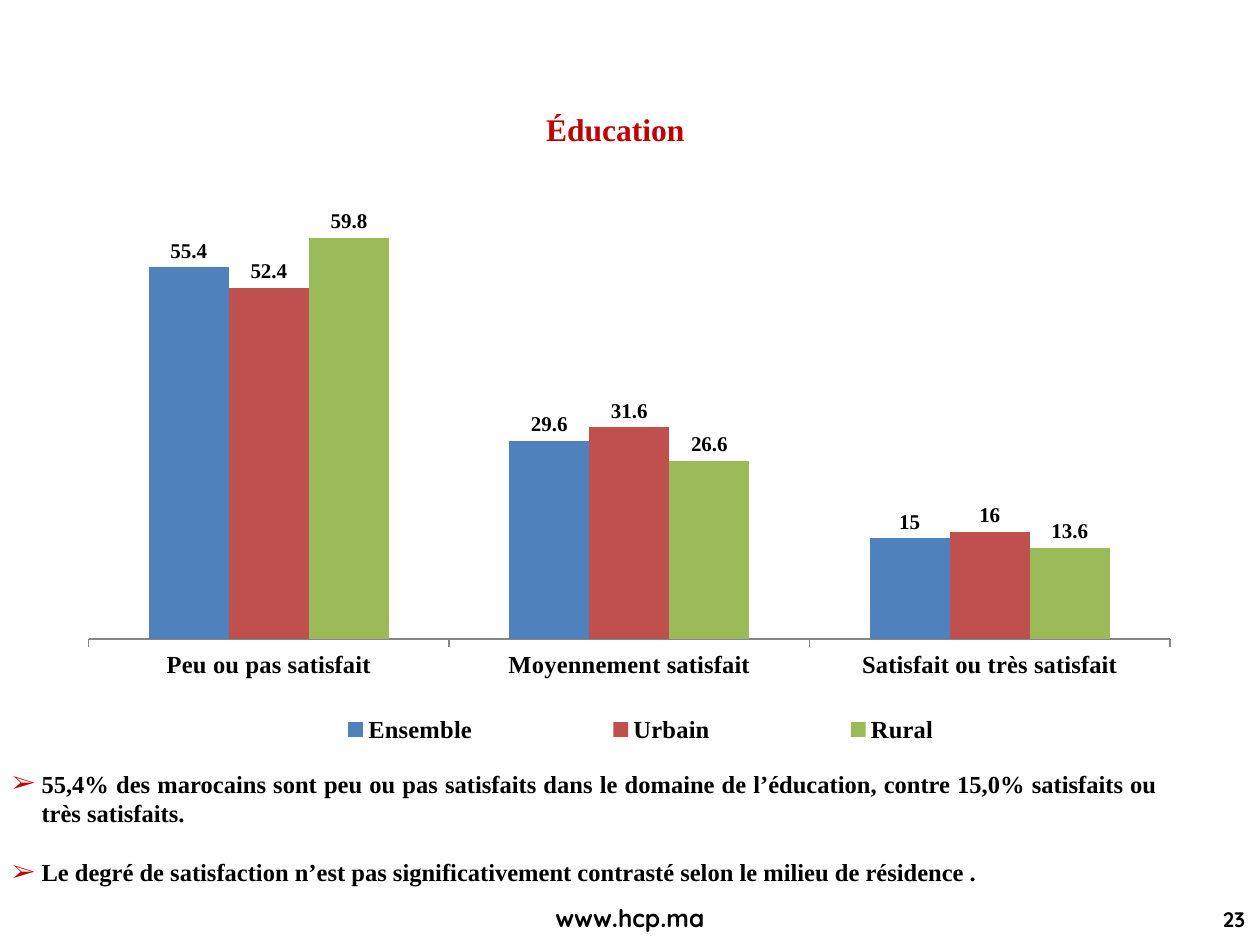
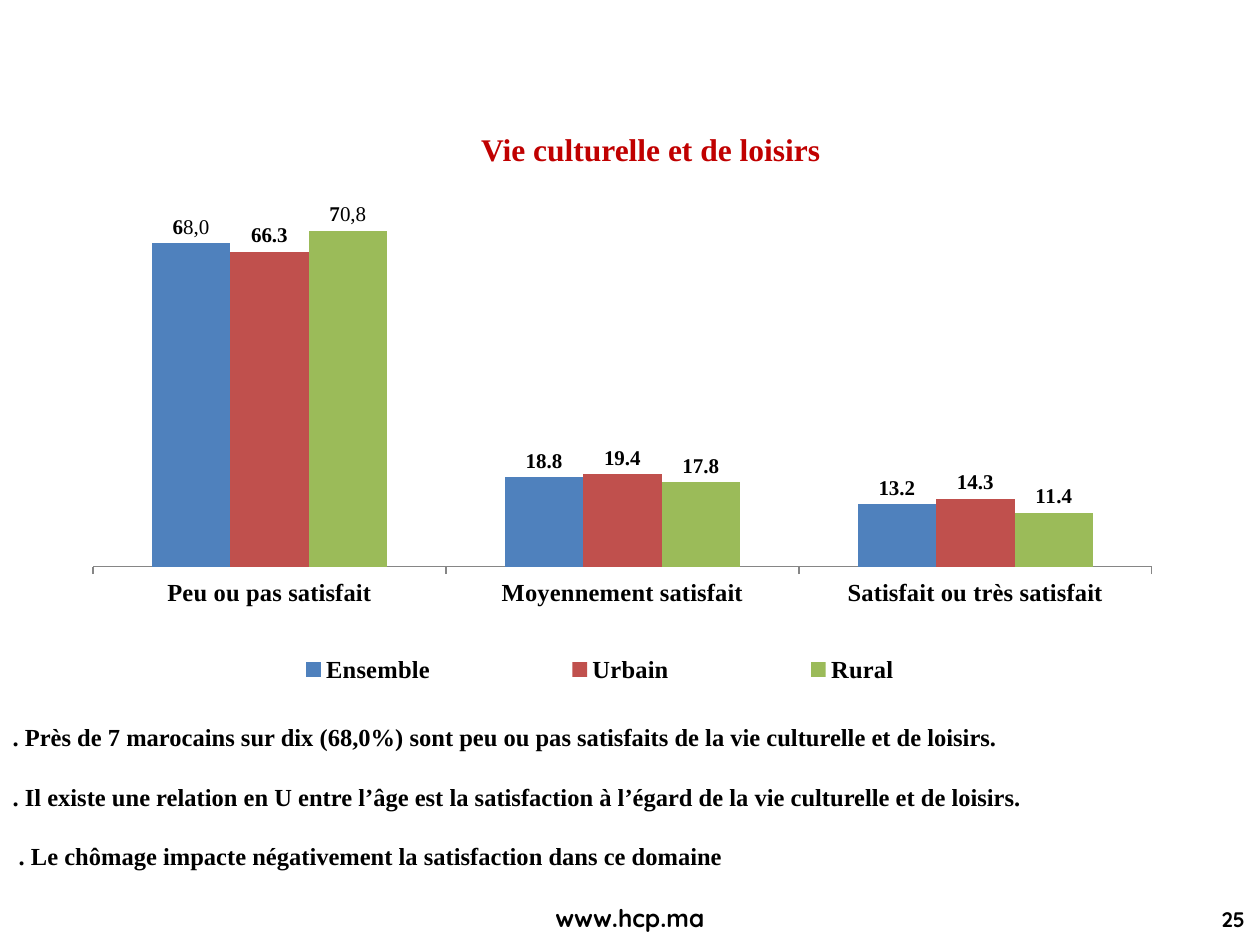
from dataclasses import dataclass
from typing import Any

from lxml import etree
from pptx import Presentation
from pptx.chart import data
from pptx.dml import color
from pptx.enum import chart as charts
from pptx.enum import text
from pptx.oxml import ns
from pptx.util import Emu, Inches, Pt

COLORS = {
    "ink": "000000",
    "accent": "C00000",
    "axis": "868686",
    "Ensemble": "4F81BD",
    "Urbain": "C0504D",
    "Rural": "9BBB59",
}
COLUMNS, ROWS = 100, 75
SERIF, SANS = "Times New Roman", "Quicksand"
LEVELS = ("Peu ou pas satisfait", "Moyennement satisfait", "Satisfait ou très satisfait")
HEADING = {"name": SERIF, "size": Pt(18), "bold": True}
READING = {"name": SERIF, "size": Pt(14), "bold": True}
VALUE = {"name": SERIF, "size": Pt(12), "bold": True}
BASE = {"name": SANS, "size": Pt(10)}
SITE = {"name": SANS, "size": Pt(14), "bold": True}
NUMBER = {"name": SANS, "size": Pt(12), "bold": True}
FRAME = {
    "word_wrap": True,
    "auto_size": text.MSO_AUTO_SIZE.NONE,
    "vertical_anchor": text.MSO_ANCHOR.MIDDLE,
}
ALIGN = text.PP_ALIGN


@dataclass(frozen=True)
class Box:
    left: float
    top: float
    width: float
    height: float


@dataclass(frozen=True)
class Domain:
    page: int
    title: str
    title_box: Box
    findings: tuple[str, ...]
    findings_box: Box
    bullet: str
    chart_box: Box
    plot: Box
    legend: Box
    scale_top: int
    scores: dict[str, tuple[float, ...]]
    rounded: dict[str, str]


SITE_BOX = Box(38.2, 71.2, 23.6, 3.3)
NUMBER_BOX = Box(84.6, 71.2, 15.2, 3.5)

DOMAINS = (
    Domain(
        page=23,
        title="Éducation ",
        title_box=Box(2.7, 8.4, 92.9, 3.7),
        findings=(
            "55,4% des marocains sont peu ou pas satisfaits dans le domaine de l’éducation, "
            "contre 15,0% satisfaits ou très satisfaits.",
            "Le degré de satisfaction n’est pas significativement contrasté "
            "selon le milieu de résidence . ",
        ),
        findings_box=Box(0, 60.3, 92.9, 10.8),
        bullet="➢",
        chart_box=Box(4.3, 12.5, 91.3, 47.8),
        plot=Box(0.03, 0.02, 0.94, 0.78),
        legend=Box(0.14, 0.91, 0.74, 0.08),
        scale_top=70,
        scores={
            "Ensemble": (55.4, 29.6, 15),
            "Urbain": (52.4, 31.6, 16),
            "Rural": (59.8, 26.6, 13.6),
        },
        rounded={},
    ),
    Domain(
        page=25,
        title="Vie culturelle et de loisirs",
        title_box=Box(5.2, 10, 92.9, 3.7),
        findings=(
            ". Près de 7 marocains sur dix (68,0%) sont peu ou pas satisfaits "
            "de la vie culturelle et de loisirs.",
            ". Il existe une relation en U entre l’âge est la satisfaction à l’égard "
            "de la vie culturelle et de loisirs.",
            " . Le chômage impacte négativement la satisfaction dans ce domaine",
        ),
        findings_box=Box(0, 56.9, 100, 12.6),
        bullet="",
        chart_box=Box(4.7, 14.8, 89.4, 40.8),
        plot=Box(0.03, 0, 0.94, 0.74),
        legend=Box(0.1, 0.9, 0.76, 0.08),
        scale_top=80,
        scores={
            "Ensemble": (68.1, 18.8, 13.2),
            "Urbain": (66.3, 19.4, 14.3),
            "Rural": (70.7, 17.8, 11.4),
        },
        rounded={"Ensemble": "68,0", "Rural": "70,8"},
    ),
)


def rgb(name: str) -> color.RGBColor:
    return color.RGBColor.from_string(COLORS[name])


def apply(target: Any, values: dict[str, Any]) -> None:
    for name, value in values.items():
        setattr(target, name, value)


def style(font: Any, values: dict[str, Any], ink: str = "ink") -> None:
    apply(font, values)
    font.color.rgb = rgb(ink)


def grid(deck: Any, box: Box) -> dict[str, Emu]:
    column, row = deck.slide_width / COLUMNS, deck.slide_height / ROWS
    return {
        "left": Emu(round(box.left * column)),
        "top": Emu(round(box.top * row)),
        "width": Emu(round(box.width * column)),
        "height": Emu(round(box.height * row)),
    }


def write(paragraph: Any, words: str, font: dict[str, Any], align: Any, ink: str = "ink") -> None:
    paragraph.alignment = align
    run = paragraph.add_run()
    run.text = words
    style(run.font, font, ink)


def add_caption(deck: Any, slide: Any, box: Box, words: str, font: dict, align: Any) -> None:
    frame = slide.shapes.add_textbox(**grid(deck, box)).text_frame
    apply(frame, FRAME)
    write(frame.paragraphs[0], words, font, align)


def set_bullet(paragraph: Any, bullet: str) -> None:
    props = paragraph._p.get_or_add_pPr()
    hang = Inches(0.23) if bullet else 0
    props.set("marL", str(hang))
    props.set("indent", str(-hang))
    if not bullet:
        etree.SubElement(props, ns.qn("a:buNone"))
        return
    tint = etree.SubElement(props, ns.qn("a:buClr"))
    etree.SubElement(tint, ns.qn("a:srgbClr"), val=COLORS["accent"])
    etree.SubElement(props, ns.qn("a:buFont"), typeface=SERIF)
    etree.SubElement(props, ns.qn("a:buChar"), char=bullet)


def add_findings(deck: Any, slide: Any, domain: Domain) -> None:
    body = slide.placeholders[1]
    apply(body, grid(deck, domain.findings_box))
    frame = body.text_frame
    apply(frame, FRAME)
    align = ALIGN.JUSTIFY if domain.bullet else ALIGN.LEFT
    for order, finding in enumerate(domain.findings):
        paragraph = frame.add_paragraph() if order else frame.paragraphs[0]
        paragraph.space_before = Pt(17 if order else 0)
        set_bullet(paragraph, domain.bullet)
        write(paragraph, finding, READING, align)


def set_layout(parent: Any, index: int, box: Box, inner: bool = False) -> None:
    for old in parent.findall(ns.qn("c:layout")):
        parent.remove(old)
    layout = etree.Element(ns.qn("c:layout"))
    manual = etree.SubElement(layout, ns.qn("c:manualLayout"))
    settings = {"layoutTarget": "inner"} if inner else {}
    settings |= {"xMode": "edge", "yMode": "edge"}
    settings |= {"x": box.left, "y": box.top, "w": box.width, "h": box.height}
    for tag, value in settings.items():
        etree.SubElement(manual, ns.qn(f"c:{tag}"), val=str(value))
    parent.insert(index, layout)


def label_series(series: Any, rounded: str) -> None:
    labels = series.data_labels
    apply(labels, {"show_value": True, "position": charts.XL_LABEL_POSITION.OUTSIDE_END})
    style(labels.font, VALUE)
    if rounded:
        label = series.points[0].data_label
        paragraph = label.text_frame.paragraphs[0]
        for part, bold in ((rounded[0], True), (rounded[1:], False)):
            run = paragraph.add_run()
            run.text = part
            style(run.font, VALUE | {"bold": bold})
        label.position = charts.XL_LABEL_POSITION.OUTSIDE_END


def add_scores(deck: Any, slide: Any, domain: Domain) -> None:
    scores = data.CategoryChartData()
    scores.categories = LEVELS
    for milieu, values in domain.scores.items():
        scores.add_series(milieu, values)
    chart = slide.shapes.add_chart(
        charts.XL_CHART_TYPE.COLUMN_CLUSTERED,
        *grid(deck, domain.chart_box).values(),
        scores,
    ).chart
    style(chart.font, BASE)
    apply(chart, {"has_title": False, "has_legend": True})
    apply(chart.legend, {"position": charts.XL_LEGEND_POSITION.BOTTOM, "include_in_layout": False})
    style(chart.legend.font, READING)
    set_layout(chart.legend._element, 1, domain.legend)
    set_layout(chart._chartSpace.chart.plotArea, 0, domain.plot, inner=True)
    apply(chart.plots[0], {"gap_width": 150, "overlap": 0, "vary_by_categories": False})
    apply(
        chart.value_axis,
        {
            "visible": False,
            "has_major_gridlines": False,
            "minimum_scale": 0,
            "maximum_scale": domain.scale_top,
        },
    )
    levels = chart.category_axis
    levels.major_tick_mark = charts.XL_TICK_MARK.OUTSIDE
    levels.format.line.color.rgb = rgb("axis")
    style(levels.tick_labels.font, READING)
    for series in chart.plots[0].series:
        series.format.fill.solid()
        series.format.fill.fore_color.rgb = rgb(series.name)
        label_series(series, domain.rounded.get(series.name, ""))


def add_domain(deck: Any, domain: Domain) -> None:
    slide = deck.slides.add_slide(deck.slide_layouts[1])
    title = slide.shapes.title
    apply(title, grid(deck, domain.title_box))
    apply(title.text_frame, FRAME)
    write(title.text_frame.paragraphs[0], domain.title, HEADING, ALIGN.CENTER, "accent")
    add_scores(deck, slide, domain)
    add_findings(deck, slide, domain)
    add_caption(deck, slide, SITE_BOX, "www.hcp.ma", SITE, ALIGN.CENTER)
    add_caption(deck, slide, NUMBER_BOX, str(domain.page), NUMBER, ALIGN.RIGHT)


def main() -> None:
    deck = Presentation()
    apply(deck, {"slide_width": Inches(10), "slide_height": Inches(7.5)})
    for domain in DOMAINS:
        add_domain(deck, domain)
    deck.save("out.pptx")


if __name__ == "__main__":
    main()
